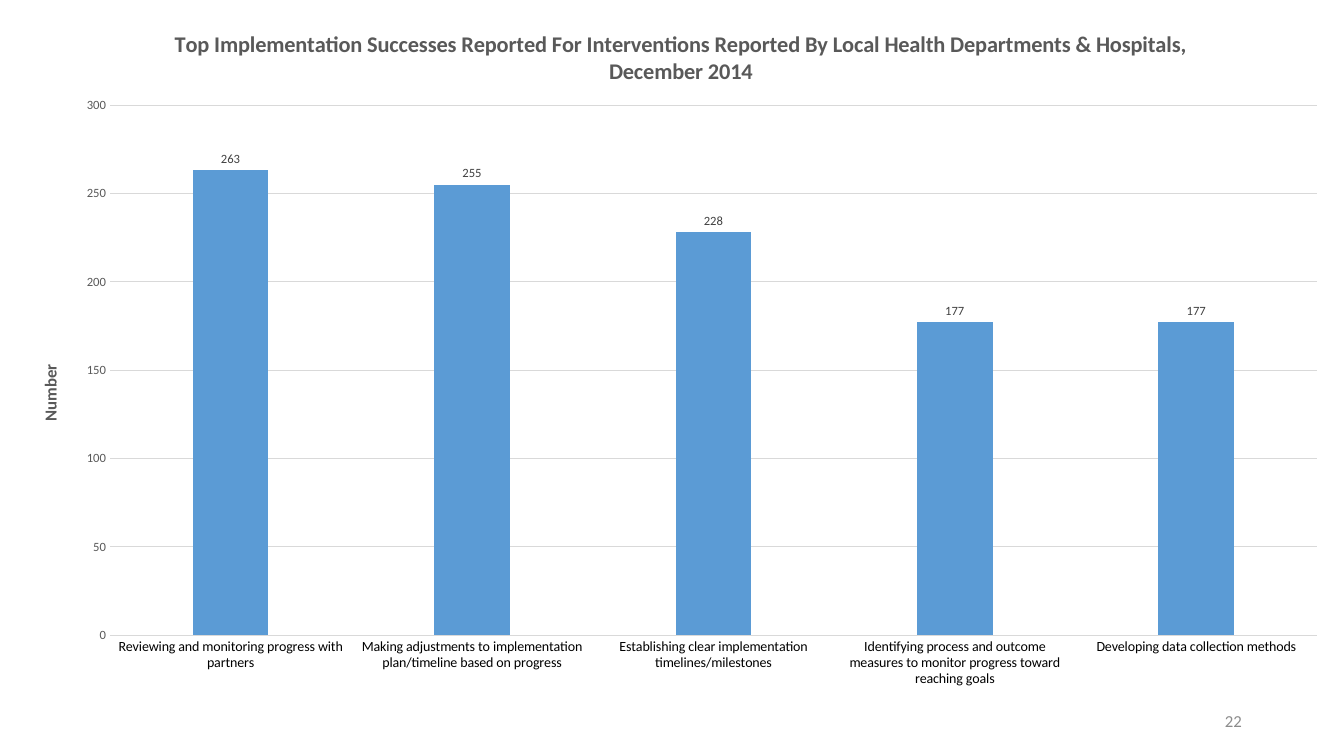
import dataclasses

import lxml.etree
import pptx
import pptx.chart.data
import pptx.dml.color
import pptx.enum.chart
import pptx.enum.text
import pptx.oxml.ns
import pptx.util

Cm, Pt = pptx.util.Cm, pptx.util.Pt
RGB = pptx.dml.color.RGBColor.from_string
qn = pptx.oxml.ns.qn


@dataclasses.dataclass(frozen=True)
class Theme:
    font: str = "Calibri"
    bar: str = "5B9BD5"
    grid: str = "D9D9D9"
    heading: str = "595959"
    label: str = "404040"
    category: str = "000000"
    page: str = "8C8C8C"
    title_size: int = 16
    axis_title_size: int = 12
    category_size: int = 10
    small_size: int = 9
    page_size: int = 12


THEME = Theme()
CHART_W, CHART_H = 33.58, 17.65

TITLE = ("Top Implementation Successes Reported For Interventions Reported By "
         "Local Health Departments & Hospitals, December 2014")
SUCCESSES = {
    "Reviewing and monitoring progress with partners": 263,
    "Making adjustments to implementation plan/timeline based on progress": 255,
    "Establishing clear implementation timelines/milestones": 228,
    "Identifying process and outcome measures to monitor progress toward reaching goals": 177,
    "Developing data collection methods": 177,
}


def style_font(font, size, color, bold=False):
    font.name = THEME.font
    font.size = Pt(size)
    font.bold = bold
    font.color.rgb = RGB(color)


def style_line(line, color):
    line.width = Pt(0.75)
    line.color.rgb = RGB(color)


def place(element, x, y, w=None, h=None):
    """Place a chart part at a position in cm from the chart's corner."""
    for old in element.findall(qn("c:layout")):
        element.remove(old)
    layout = lxml.etree.Element(qn("c:layout"))
    manual = lxml.etree.SubElement(layout, qn("c:manualLayout"))
    values = []
    if w is not None:
        values.append(("layoutTarget", "inner"))
    values += [("xMode", "edge"), ("yMode", "edge"),
               ("x", x / CHART_W), ("y", y / CHART_H)]
    if w is not None:
        values += [("w", w / CHART_W), ("h", h / CHART_H)]
    for tag, value in values:
        lxml.etree.SubElement(manual, qn("c:" + tag)).set("val", str(value))
    tx = element.find(qn("c:tx"))
    element.insert(0 if tx is None else element.index(tx) + 1, layout)


def add_heading(title, text, size, x, y):
    r = title.text_frame.paragraphs[0].add_run()
    r.text = text
    style_font(r.font, size, THEME.heading, bold=True)
    title_element = title.text_frame._txBody.getparent().getparent()
    place(title_element, x, y)


def style_axes(chart):
    cat, val = chart.category_axis, chart.value_axis
    for axis in (cat, val):
        axis.major_tick_mark = axis.minor_tick_mark = pptx.enum.chart.XL_TICK_MARK.NONE
    style_font(cat.tick_labels.font, THEME.category_size, THEME.category)
    style_line(cat.format.line, THEME.grid)

    val.minimum_scale, val.maximum_scale, val.major_unit = 0, 300, 50
    val.tick_labels.number_format = "0"
    val.tick_labels.number_format_is_linked = False
    style_font(val.tick_labels.font, THEME.small_size, THEME.heading)
    val.format.line.fill.background()
    style_line(val.major_gridlines.format.line, THEME.grid)
    add_heading(val.axis_title, "Number", THEME.axis_title_size, 0.6, 9.1)


def style_bars(plot):
    plot.gap_width, plot.overlap = 219, -27
    plot.vary_by_categories = False
    fill = plot.series[0].format.fill
    fill.solid()
    fill.fore_color.rgb = RGB(THEME.bar)
    labels = plot.series[0].data_labels
    labels.show_value = True
    labels.position = pptx.enum.chart.XL_LABEL_POSITION.OUTSIDE_END
    style_font(labels.font, THEME.small_size, THEME.label)


def add_success_chart(s):
    data = pptx.chart.data.CategoryChartData()
    data.categories = list(SUCCESSES)
    data.add_series("Series 1", list(SUCCESSES.values()))
    chart = s.shapes.add_chart(
        pptx.enum.chart.XL_CHART_TYPE.COLUMN_CLUSTERED,
        Cm(0.3), Cm(0), Cm(CHART_W), Cm(CHART_H), data).chart
    style_font(chart.font, THEME.category_size, THEME.category)
    chart.has_legend = False
    add_heading(chart.chart_title, TITLE, THEME.title_size, 4, 0.62)
    style_axes(chart)
    style_bars(chart.plots[0])
    plot_area = chart.plots[0]._element.getparent()
    place(plot_area, 2.47, 2.65, 30.42, 13.36)


def add_page_number(s, number):
    tf = s.shapes.add_textbox(Cm(23.93), Cm(17.65), Cm(7.62), Cm(1.02)).text_frame
    tf.word_wrap = True
    tf.vertical_anchor = pptx.enum.text.MSO_ANCHOR.MIDDLE
    p = tf.paragraphs[0]
    p.alignment = pptx.enum.text.PP_ALIGN.RIGHT
    r = p.add_run()
    r.text = number
    style_font(r.font, THEME.page_size, THEME.page)


def main():
    prs = pptx.Presentation()
    prs.slide_width, prs.slide_height = Cm(33.87), Cm(19.05)
    # Blank layout: the heading belongs to the chart
    s = prs.slides.add_slide(prs.slide_layouts[6])
    add_page_number(s, "22")
    add_success_chart(s)
    prs.save("out.pptx")


if __name__ == "__main__":
    main()
